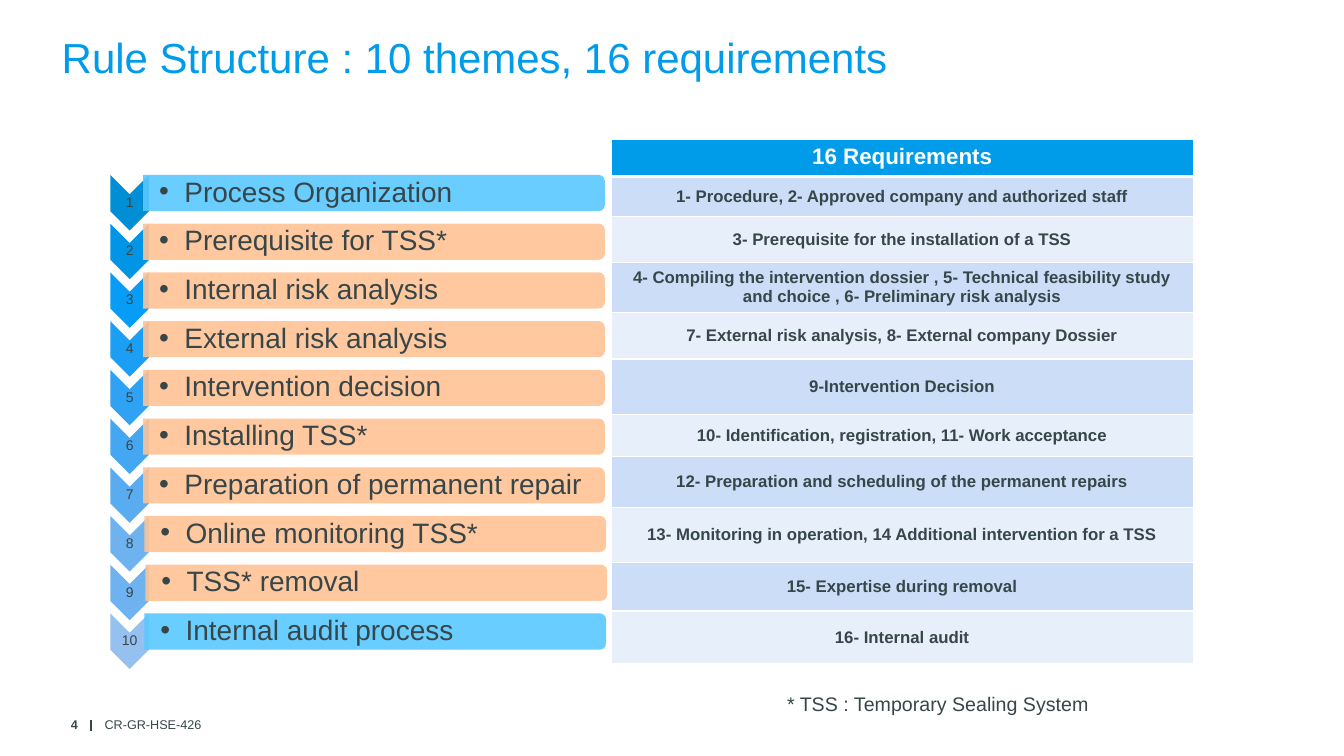
from lxml import etree
from pptx import Presentation
from pptx import util as u
from pptx.dml import color
from pptx.enum import shapes, text
from pptx.oxml import ns

BLUE, SKY, PEACH, WHITE = "009CEA", "59C8FF", "FFC395", "FFFFFF"
DARK_BAND, LIGHT_BAND = "CCDEF7", "E7EFFB"

THEMES = [
    ("Process Organization", "008ED4", SKY, 0),
    ("Prerequisite for TSS*", "0395E5", PEACH, 0),
    ("Internal risk analysis", "079CF5", PEACH, 0),
    ("External risk analysis", "1A9FF5", PEACH, 0),
    ("Intervention decision", "30A2F3", PEACH, 0),
    ("Installing TSS*", "45A7F2", PEACH, 0),
    ("Preparation of permanent repair", "5AACF1", PEACH, 0),
    ("Online monitoring TSS*", "6EB2F0", PEACH, 0.9),
    ("TSS* removal", "6EB2F0", PEACH, 1.6),
    ("Internal audit process", "95C1F1", SKY, 0.9),
]
REQUIREMENTS = [
    ("16 Requirements", 25.9),
    ("1- Procedure, 2- Approved company and authorized staff", 28.8),
    ("3- Prerequisite for the installation of a TSS", 32.4),
    ("4- Compiling the intervention dossier , 5- Technical feasibility study "
     "and choice , 6- Preliminary risk analysis", 35.3),
    ("7- External risk analysis, 8- External company Dossier", 33.1),
    ("9-Intervention Decision", 39.6),
    ("10- Identification, registration, 11- Work acceptance", 30.2),
    ("12- Preparation and scheduling of the permanent repairs", 36),
    ("13- Monitoring in operation, 14 Additional intervention for a TSS", 39.6),
    ("15- Expertise during removal", 34.6),
    ("16- Internal audit", 37.4),
]


def rgb(value):
    return color.RGBColor.from_string(value)


def add_child(parent, tag, **attributes):
    return etree.SubElement(parent, ns.qn(tag), attributes)


class SlideBuilder:
    font_name = "Arial"
    ink = "374649"

    def __init__(self, slide):
        self.slide = slide

    def style(self, paragraph, size, ink=None, bold=False, align=text.PP_ALIGN.LEFT):
        paragraph.alignment = align
        for run in paragraph.runs:
            run.font.name = self.font_name
            run.font.size = u.Pt(size)
            run.font.bold = bold
            run.font.color.rgb = rgb(ink or self.ink)

    def title(self, words, left, top, width, height):
        shape = self.slide.shapes.title
        shape.left, shape.top, shape.width, shape.height = map(
            u.Pt, (left, top, width, height))
        frame = shape.text_frame
        frame.text = words
        frame.auto_size = text.MSO_AUTO_SIZE.NONE
        frame.vertical_anchor = text.MSO_ANCHOR.MIDDLE
        self.style(frame.paragraphs[0], 30, BLUE)

    def label(self, words, left, top, width, height, size, bold=False,
              align=text.PP_ALIGN.LEFT, margins=None, bullet=False, spacing=1.0,
              anchor=text.MSO_ANCHOR.MIDDLE):
        shape = self.slide.shapes.add_textbox(*map(u.Pt, (left, top, width, height)))
        frame = shape.text_frame
        frame.word_wrap = True
        frame.vertical_anchor = anchor
        if margins:
            (frame.margin_left, frame.margin_top, frame.margin_right,
             frame.margin_bottom) = map(u.Pt, margins)
        frame.text = words
        paragraph = frame.paragraphs[0]
        paragraph.line_spacing = spacing
        if bullet:
            properties = paragraph._p.get_or_add_pPr()
            properties.set("marL", str(u.Pt(18)))
            properties.set("indent", str(u.Pt(-18)))
            add_child(properties, "a:buFont", typeface=self.font_name)
            add_child(properties, "a:buChar", char="•")
        self.style(paragraph, size, bold=bold, align=align)

    def quarter_turned(self, kind, left, top, width, height, fill, opacity=100):
        shift = (width - height) / 2
        shape = self.slide.shapes.add_shape(
            kind, *map(u.Pt, (left + shift, top - shift, height, width)))
        shape.rotation = 90
        shape.shadow.inherit = False
        shape.line.fill.background()
        shape.fill.solid()
        shape.fill.fore_color.rgb = rgb(fill)
        if opacity < 100:
            fill_color = shape._element.spPr.find(
                ns.qn("a:solidFill")).find(ns.qn("a:srgbClr"))
            add_child(fill_color, "a:alpha", val=str(opacity * 1000))

    def line(self, left, top, bottom):
        connector = self.slide.shapes.add_connector(
            shapes.MSO_CONNECTOR.STRAIGHT, *map(u.Pt, (left, top, left, bottom)))
        connector.line.color.rgb = rgb(self.ink)
        connector.line.width = u.Pt(1)
        add_child(connector._element.spPr, "a:effectLst")

    def cell_borders(self, cell, top, bottom):
        properties = cell._tc.get_or_add_tcPr()
        widths = {"a:lnL": 1, "a:lnR": 1, "a:lnT": top, "a:lnB": bottom}
        for tag, width in widths.items():
            border = add_child(properties, tag, w=str(u.Pt(width)))
            add_child(add_child(border, "a:solidFill"), "a:srgbClr", val=WHITE)

    def table(self, rows, left, top, width):
        height = sum(row_height for _, row_height in rows)
        table = self.slide.shapes.add_table(
            len(rows), 1, *map(u.Pt, (left, top, width, height))).table
        for index, (words, row_height) in enumerate(rows):
            header = index == 0
            table.rows[index].height = u.Pt(row_height)
            cell = table.cell(index, 0)
            self.cell_borders(cell, 3 if index == 1 else 1, 3 if header else 1)
            cell.fill.solid()
            band = DARK_BAND if index % 2 else LIGHT_BAND
            cell.fill.fore_color.rgb = rgb(BLUE if header else band)
            cell.vertical_anchor = (
                text.MSO_ANCHOR.TOP if header else text.MSO_ANCHOR.MIDDLE)
            cell.text_frame.text = words
            self.style(cell.text_frame.paragraphs[0], 16 if header else 12,
                       WHITE if header else self.ink, True, text.PP_ALIGN.CENTER)

    def theme(self, number, words, chevron_fill, bar_fill, shift):
        top = 125 + 34.8 * (number - 1)
        bar_left = 102.2 + shift
        self.quarter_turned(shapes.MSO_SHAPE.CHEVRON, 78.8, top, 27.6, 39.6, chevron_fill)
        self.label(str(number), 78.8, top + 14, 27.6, 11.6, 10, spacing=0.9,
                   align=text.PP_ALIGN.CENTER, margins=(0.7, 0.7, 0.7, 0.7))
        self.quarter_turned(shapes.MSO_SHAPE.ROUND_2_SAME_RECTANGLE,
                            bar_left, top, 329.8, 25.8, bar_fill, 90)
        self.label(words, bar_left, top + 1.3, 328.3, 23.2, 20, spacing=0.9,
                   margins=(11.5, 0.7, 0.7, 0.7), bullet=True)


def main():
    presentation = Presentation()
    presentation.slide_width = u.Pt(960)
    presentation.slide_height = u.Pt(540)
    builder = SlideBuilder(presentation.slides.add_slide(presentation.slide_layouts[5]))

    builder.title("Rule Structure : 10 themes, 16 requirements", 36.9, 19.4, 765.4, 42.5)
    builder.line(65, 514, 522)
    builder.label("CR-GR-HSE-426", 67.7, 507.6, 283.7, 20.2, 9)
    builder.label("4", 17.3, 507.6, 45.4, 20.2, 9, bold=True, align=text.PP_ALIGN.RIGHT)
    for number, theme in enumerate(THEMES, 1):
        builder.theme(number, *theme)
    builder.table(REQUIREMENTS, 436.4, 99.7, 416)
    builder.label("* TSS : Temporary Sealing System", 555.1, 491, 247.7, 24.5, 14,
                  anchor=text.MSO_ANCHOR.TOP)
    presentation.save("out.pptx")


if __name__ == "__main__":
    main()
